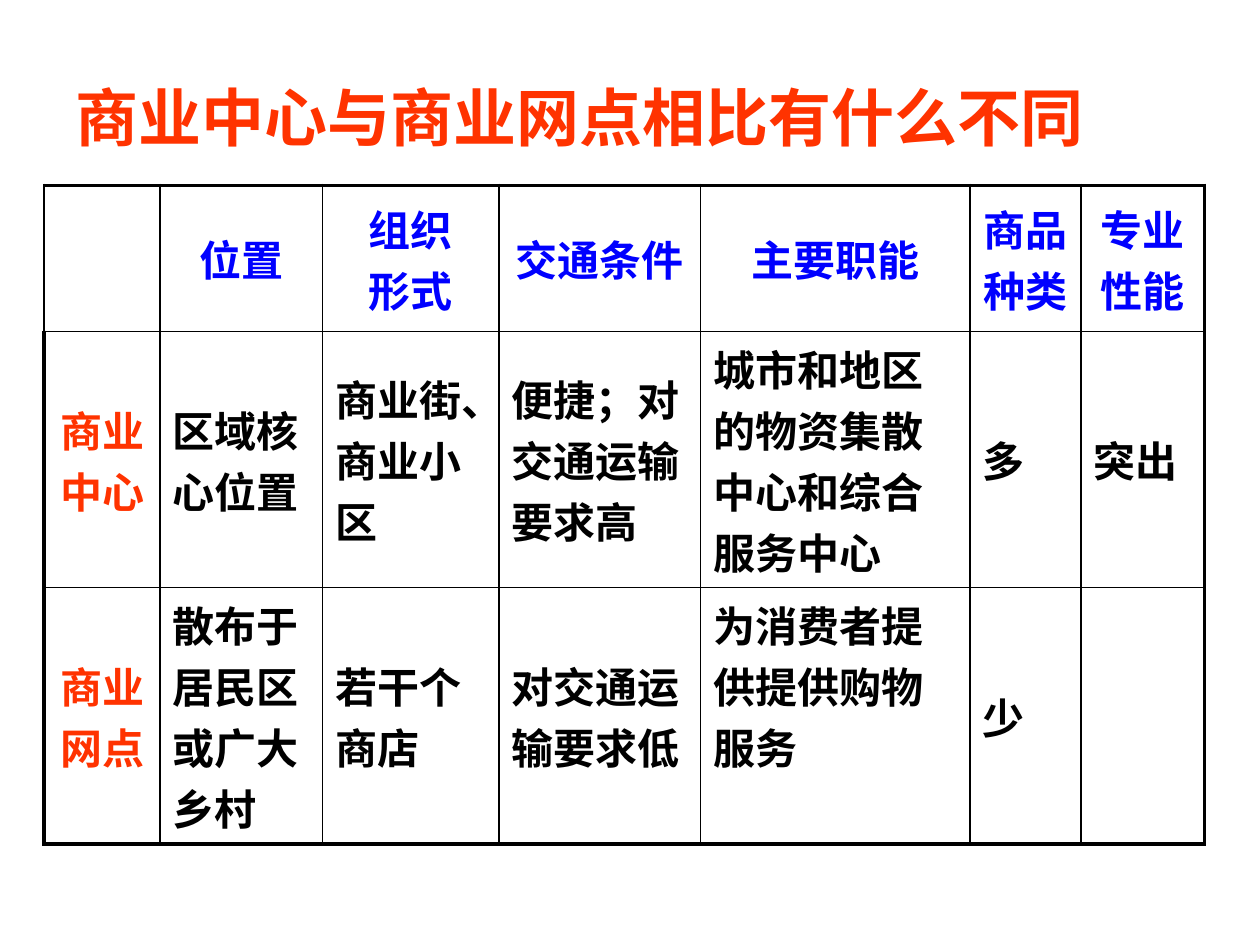
from dataclasses import dataclass

from lxml import etree
from pptx import Presentation
from pptx.dml.color import RGBColor
from pptx.enum.text import MSO_ANCHOR, PP_ALIGN
from pptx.oxml.ns import qn
from pptx.util import Inches, Pt

LEFT, CENTER = PP_ALIGN.LEFT, PP_ALIGN.CENTER
TOP, MIDDLE = MSO_ANCHOR.TOP, MSO_ANCHOR.MIDDLE


@dataclass(frozen=True)
class Theme:
    font: str = "Noto Sans CJK SC"
    accent: str = "FF3300"
    header: str = "0000FF"
    body: str = "000000"
    border: str = "000000"
    title_size: float = 36
    table_size: float = 24
    thin: float = 1
    thick: float = 2.25


THEME = Theme()

COLUMN_WIDTHS = [0.92, 1.29, 1.4, 1.6, 2.14, 0.88, 0.98]
ROW_HEIGHTS = [1.16, 1.85, 1.93]
# A line break in a cell starts a new paragraph.
ROWS = [
    ["", "位置", "组织\n形式", "交通条件", "主要职能", "商品种类", "专业性能"],
    ["商业中心", "区域核心位置", "商业街、商业小区", "便捷；对交通运输要求高",
     "城市和地区的物资集散中心和综合服务中心", "多", "突出"],
    ["商业网点", "散布于居民区或广大乡村", "若干个商店", "对交通运输要求低",
     "为消费者提供提供购物服务", "少", ""],
]
TOP_ALIGNED_CELL = (2, 4)


def add_run(paragraph, text, size, color):
    run = paragraph.add_run()
    run.text = text
    run.font.size = Pt(size)
    run.font.bold = True
    run.font.name = THEME.font
    run.font.color.rgb = RGBColor.from_string(color)
    east_asian = etree.SubElement(run.font._element, qn("a:ea"))
    east_asian.set("typeface", THEME.font)


def add_title(slide, text):
    title = slide.shapes.title
    title.left, title.top = Inches(0.5), Inches(0.3)
    title.width, title.height = Inches(9), Inches(1.25)
    title.text_frame.vertical_anchor = MIDDLE
    title.text_frame.word_wrap = True
    paragraph = title.text_frame.paragraphs[0]
    paragraph.alignment = LEFT
    add_run(paragraph, text, THEME.title_size, THEME.accent)


def set_borders(cell, widths):
    """Draw the cell's sides; widths maps L, R, T and B to points."""
    properties = cell._tc.get_or_add_tcPr()
    for side, width in widths.items():
        line = etree.SubElement(properties, qn(f"a:ln{side}"), w=str(Pt(width)))
        fill = etree.SubElement(line, qn("a:solidFill"))
        etree.SubElement(fill, qn("a:srgbClr"), val=THEME.border)


def border_widths(row, column):
    """Thick outer frame, except beside the empty corner cell."""
    def weight(is_thick):
        return THEME.thick if is_thick else THEME.thin

    return {
        "L": weight(column == 0 and row > 0),
        "R": weight(column == len(COLUMN_WIDTHS) - 1),
        "T": weight(row == 0),
        "B": weight(row == len(ROW_HEIGHTS) - 1),
    }


def fill_cell(cell, text, row, column):
    if row == 0:
        color = THEME.header
    else:
        color = THEME.accent if column == 0 else THEME.body
    cell.vertical_anchor = TOP if (row, column) == TOP_ALIGNED_CELL else MIDDLE
    for index, line in enumerate(text.split("\n") if text else []):
        frame = cell.text_frame
        paragraph = frame.add_paragraph() if index else frame.paragraphs[0]
        paragraph.alignment = CENTER if row == 0 or column == 0 else LEFT
        add_run(paragraph, line, THEME.table_size, color)
    set_borders(cell, border_widths(row, column))
    cell.fill.background()


def add_comparison_table(slide):
    frame = slide.shapes.add_table(
        len(ROW_HEIGHTS), len(COLUMN_WIDTHS), Inches(0.35), Inches(1.47),
        Inches(sum(COLUMN_WIDTHS)), Inches(sum(ROW_HEIGHTS)))
    table = frame.table
    table.first_row = table.horz_banding = False
    for column, width in zip(table.columns, COLUMN_WIDTHS):
        column.width = Inches(width)
    for row, height in zip(table.rows, ROW_HEIGHTS):
        row.height = Inches(height)
    for row, texts in enumerate(ROWS):
        for column, text in enumerate(texts):
            fill_cell(table.cell(row, column), text, row, column)


def main():
    presentation = Presentation()
    presentation.slide_width = Inches(10)
    presentation.slide_height = Inches(7.5)
    slide = presentation.slides.add_slide(presentation.slide_layouts[5])
    add_title(slide, "商业中心与商业网点相比有什么不同")
    add_comparison_table(slide)
    presentation.save("out.pptx")


if __name__ == "__main__":
    main()
